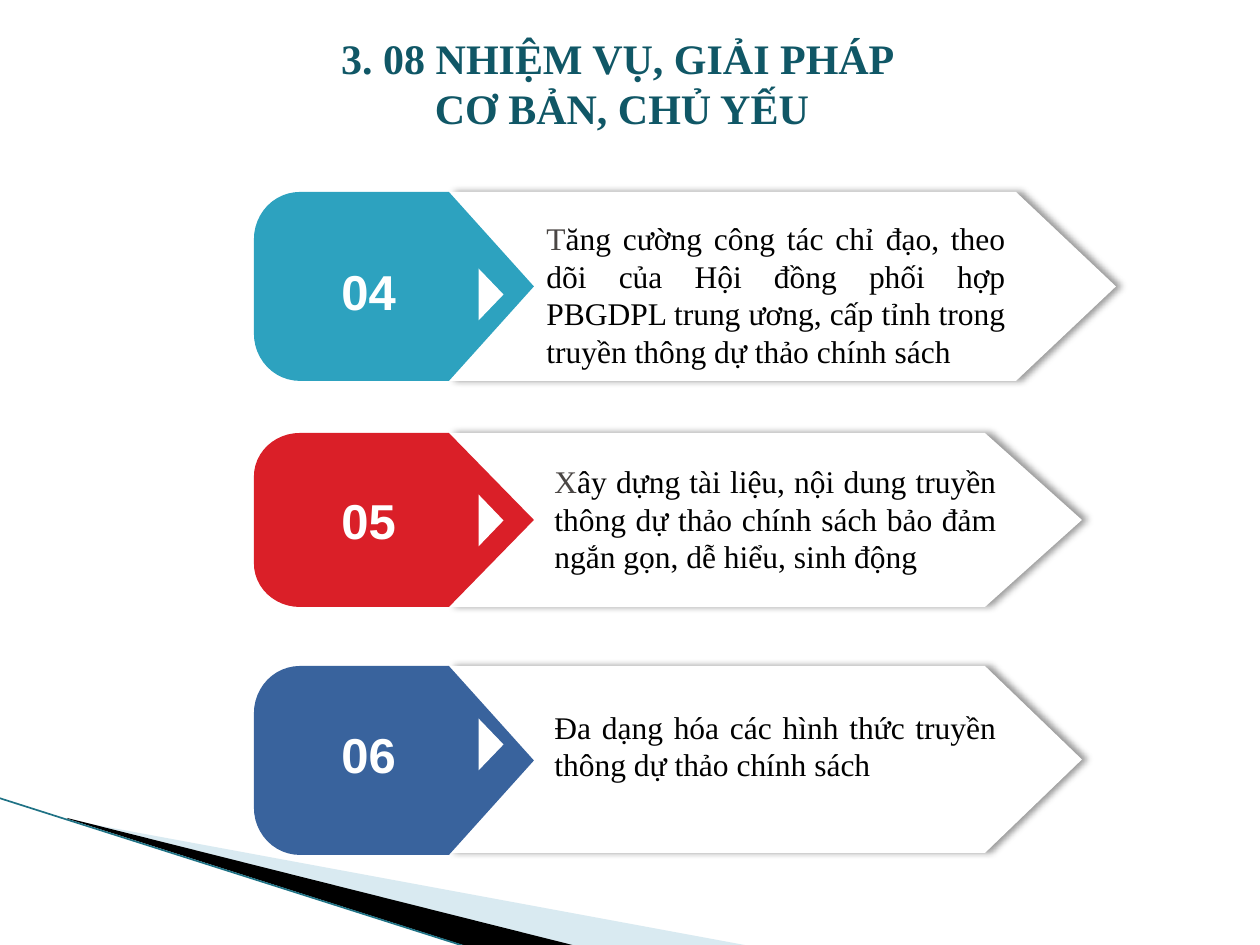
import math
import lxml.etree
import pptx
import pptx.dml.color
import pptx.enum.shapes
import pptx.enum.text
import pptx.oxml.ns
import pptx.util

PX = 914400 / 126
qn = pptx.oxml.ns.qn
align = pptx.enum.text.PP_ALIGN


def colour(fmt, value):
    fmt.solid()
    rgb = fmt.fore_color if hasattr(fmt, "fore_color") else fmt.color
    rgb.rgb = pptx.dml.color.RGBColor.from_string(value)


def outline(points, fill):
    corners = [(round(x * PX), round(y * PX)) for x, y in points]
    builder = slide.shapes.build_freeform(*corners[0], scale=1.0)
    builder.add_line_segments(corners[1:], close=True)
    shape = builder.convert_to_shape()
    shape.shadow.inherit = False
    shape.line.fill.background()
    colour(shape.fill, fill)
    return shape


prs = pptx.Presentation()
prs.slide_width = round(1260 * PX)
prs.slide_height = round(945 * PX)
slide = prs.slides.add_slide(prs.slide_layouts[6])

pale_wedge = outline([(69, 820), (750, 946), (575, 946)], "A0CBDC")
tint = pale_wedge.fill._xPr.find(".//" + qn("a:srgbClr"))
lxml.etree.SubElement(tint, qn("a:alpha"), val="40000")
outline([(67, 818), (576, 946), (469, 947), (68, 819)], "000000")

edge = slide.shapes.add_connector(
    pptx.enum.shapes.MSO_CONNECTOR.STRAIGHT,
    *[round(v * PX) for v in (-1, 798, 467, 947)])
colour(edge.line.fill, "1F7285")
edge.line.width = pptx.util.Pt(0.95)
lxml.etree.SubElement(edge._element.spPr, qn("a:effectLst"))

TAB_LEFT, TAB_SHOULDER, TAB_TIP, CORNER_WIDTH = 254, 449, 534, 46
tasks = [
    dict(number="04", fill="2DA2BF", top=192, tab=189, arrow=189,
         shoulder=1016, tip=1116, marker=282, number_top=255,
         box=(534, 212, 484, 165), initial="T",
         rest="ăng cường công tác chỉ đạo, theo dõi của Hội đồng phối hợp "
              "PBGDPL trung ương, cấp tỉnh trong truyền thông dự thảo chính sách"),
    dict(number="05", fill="DA1F28", top=433, tab=174, arrow=174,
         shoulder=985, tip=1082, marker=508, number_top=484,
         box=(542, 455, 467, 127), initial="X",
         rest="ây dựng tài liệu, nội dung truyền thông dự thảo chính sách "
              "bảo đảm ngắn gọn, dễ hiểu, sinh động"),
    dict(number="06", fill="39639D", top=666, tab=189, arrow=187,
         shoulder=985, tip=1082, marker=732, number_top=718,
         box=(542, 701, 467, 89), initial="",
         rest="Đa dạng hóa các hình thức truyền thông dự thảo chính sách"),
]

serif = dict(name="Times New Roman", size=pptx.util.Pt(18))
heading = dict(serif, size=pptx.util.Pt(24), bold=True)
numeral = dict(name="Arial", size=pptx.util.Pt(28), bold=True)
texts = [((326, 25, 592, 115), False, align.CENTER, heading,
          [[("3. 08 NHIỆM VỤ, GIẢI PHÁP ", "105766")],
           [("CƠ BẢN, CHỦ YẾU", "105766")]])]

for task in tasks:
    top, tab = task["top"], task["tab"]
    bottom = top + task["arrow"]
    arrow = outline([(TAB_SHOULDER, top), (task["shoulder"], top),
                     (task["tip"], top + task["arrow"] / 2),
                     (task["shoulder"], bottom), (TAB_SHOULDER, bottom)], "FFFFFF")
    effects = arrow._element.spPr.find(qn("a:effectLst"))
    shadow = lxml.etree.SubElement(
        effects, qn("a:outerShdw"), blurRad="50800", dist="38100",
        dir="0", algn="l", rotWithShape="0")
    shade = lxml.etree.SubElement(shadow, qn("a:srgbClr"), val="000000")
    lxml.etree.SubElement(shade, qn("a:alpha"), val="40000")

    corner_height = tab / 4
    upper = []
    for step in range(13):
        angle = math.pi / 2 * step / 12
        upper.append((TAB_LEFT + CORNER_WIDTH * (1 - math.cos(angle)),
                      top + corner_height * (1 - math.sin(angle))))
    lower = [(x, 2 * top + tab - y) for x, y in reversed(upper)]
    outline(upper + [(TAB_SHOULDER, top), (TAB_TIP, top + tab / 2),
                     (TAB_SHOULDER, top + tab)] + lower, task["fill"])

    marker = slide.shapes.add_shape(
        pptx.enum.shapes.MSO_SHAPE.ISOSCELES_TRIANGLE,
        *[round(v * PX) for v in (465, task["marker"], 52, 25)])
    marker.rotation = 90
    marker.shadow.inherit = False
    marker.line.fill.background()
    colour(marker.fill, "FFFFFF")

    texts.append(((329, task["number_top"], 81, 72), False, align.LEFT, numeral,
                  [[(task["number"], "FFFFFF")]]))
    texts.append((task["box"], True, align.JUSTIFY, serif,
                  [[(task["initial"], "4A4644"), (task["rest"], "000000")]]))

for place, wrap, alignment, style, paragraphs in texts:
    frame = slide.shapes.add_textbox(*[round(v * PX) for v in place]).text_frame
    frame_format = dict(word_wrap=wrap,
                        auto_size=pptx.enum.text.MSO_AUTO_SIZE.SHAPE_TO_FIT_TEXT,
                        vertical_anchor=pptx.enum.text.MSO_ANCHOR.MIDDLE)
    for key, value in frame_format.items():
        setattr(frame, key, value)
    for index, pieces in enumerate(paragraphs):
        paragraph = frame.add_paragraph() if index else frame.paragraphs[0]
        paragraph.alignment = alignment
        for words, ink in pieces:
            if not words:
                continue
            run = paragraph.add_run()
            run.text = words
            for key, value in style.items():
                setattr(run.font, key, value)
            colour(run.font.fill, ink)

prs.save("out.pptx")
